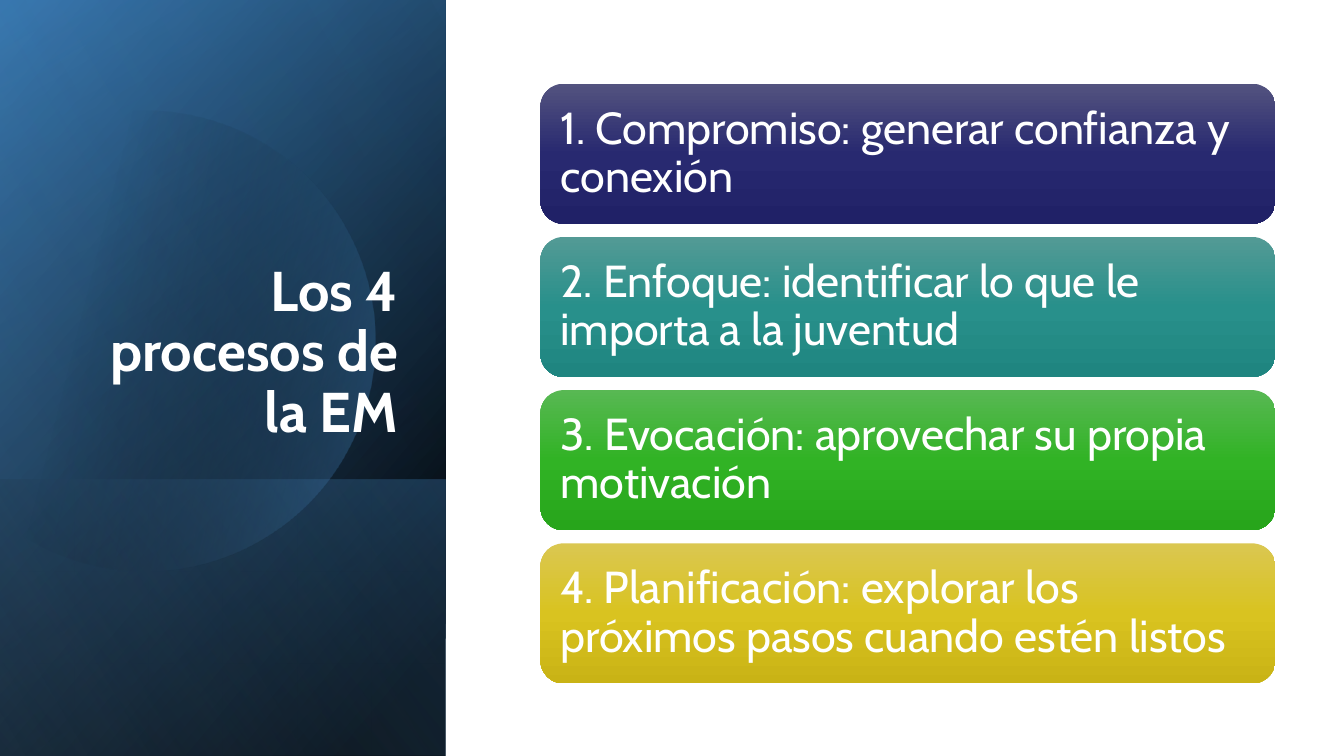
from dataclasses import dataclass
from math import acos, cos, sin

from lxml.etree import SubElement
from pptx import Presentation
from pptx.dml.color import RGBColor
from pptx.enum.shapes import MSO_SHAPE
from pptx.enum.text import MSO_ANCHOR, MSO_AUTO_SIZE, PP_ALIGN
from pptx.oxml.ns import qn
from pptx.shapes.autoshape import Shape
from pptx.slide import Slide
from pptx.text.text import TextFrame
from pptx.util import Inches, Pt

FONT = "Cabin"
WHITE = RGBColor(0xFF, 0xFF, 0xFF)
BLACK = RGBColor(0x00, 0x00, 0x00)
NAVY = RGBColor(0x2D, 0x6A, 0xA0)
BLUE = RGBColor(0x46, 0x8D, 0xCB)
SKY = RGBColor(0x90, 0xBB, 0xE0)


@dataclass
class Stop:
    place: int
    color: RGBColor
    alpha: int = 100


@dataclass
class Panel:
    top: float
    height: float
    angle: int
    stops: list[Stop]


@dataclass
class Card:
    text: str
    light: RGBColor
    middle: RGBColor
    dark: RGBColor


WIDE = 4.42
BACK = [
    Panel(0, 7.5, 50, [Stop(8, BLACK), Stop(100, NAVY)]),
    Panel(0, 7.5, 30, [Stop(0, BLACK, 0), Stop(99, BLUE, 46)]),
    Panel(4.76, 2.74, 130, [Stop(2, BLUE, 29), Stop(100, BLACK, 30)]),
]
GLOW = Panel(0, 7.5, 120, [Stop(0, BLACK, 0), Stop(99, SKY, 11)])
DISC = [Stop(29, BLACK, 0), Stop(100, BLUE, 43)]
CARDS = [
    Card("1. Compromiso: generar confianza y conexión",
         RGBColor(0x53, 0x53, 0x7F), RGBColor(0x28, 0x29, 0x70), RGBColor(0x20, 0x21, 0x67)),
    Card("2. Enfoque: identificar lo que le importa a la juventud",
         RGBColor(0x53, 0x9A, 0x95), RGBColor(0x28, 0x90, 0x8B), RGBColor(0x1F, 0x85, 0x80)),
    Card("3. Evocación: aprovechar su propia motivación",
         RGBColor(0x58, 0xB8, 0x53), RGBColor(0x31, 0xB3, 0x25), RGBColor(0x27, 0xA5, 0x1B)),
    Card("4. Planificación: explorar los próximos pasos cuando estén listos",
         RGBColor(0xDA, 0xC7, 0x51), RGBColor(0xD9, 0xC3, 0x20), RGBColor(0xC9, 0xB3, 0x15)),
]


def shade(shape: Shape, stops: list[Stop], angle: int) -> None:
    shape.shadow.inherit = False
    shape.line.fill.background()
    shape.fill.gradient()
    grad = shape.element.spPr.find(qn("a:gradFill"))
    grad.find(qn("a:lin")).set("ang", str(angle * 60000))
    items = grad.find(qn("a:gsLst"))
    for old in list(items):
        items.remove(old)
    for stop in stops:
        item = SubElement(items, qn("a:gs"), pos=str(stop.place * 1000))
        color = SubElement(item, qn("a:srgbClr"), val=str(stop.color))
        if stop.alpha < 100:
            SubElement(color, qn("a:alpha"), val=str(stop.alpha * 1000))


def draw_panel(slide: Slide, panel: Panel) -> None:
    left = (WIDE - panel.height) / 2
    top = panel.top + (panel.height - WIDE) / 2
    shape = slide.shapes.add_shape(
        MSO_SHAPE.RECTANGLE, Inches(left), Inches(top), Inches(panel.height), Inches(WIDE))
    shape.rotation = 90
    shape.element.spPr.find(qn("a:xfrm")).set("flipH", "1")
    shade(shape, panel.stops, panel.angle)


def draw_disc(slide: Slide) -> None:
    mid_x, mid_y, radius, edge = 1.44, 3.38, 2.28, -0.15
    sweep = acos((edge - mid_x) / radius)
    steps = 120
    turns = [sweep * (2 * i / steps - 1) for i in range(steps + 1)]
    points = [(Inches(mid_x + radius * cos(t)), Inches(mid_y + radius * sin(t))) for t in turns]
    pen = slide.shapes.build_freeform(*points[0])
    pen.add_line_segments(points[1:], close=True)
    shade(pen.convert_to_shape(), DISC, 14)


def write(frame: TextFrame, text: str, size: int, align: PP_ALIGN, bold: bool) -> None:
    frame.word_wrap = True
    frame.auto_size = MSO_AUTO_SIZE.NONE
    para = frame.paragraphs[0]
    para.alignment = align
    para.line_spacing = 0.9
    run = para.add_run()
    run.text = text
    run.font.name = FONT
    run.font.size = Pt(size)
    run.font.bold = bold
    run.font.color.rgb = WHITE


def draw_title(slide: Slide) -> None:
    title = slide.shapes.title
    title.left, title.top = Inches(0.64), Inches(1.84)
    title.width, title.height = Inches(3.41), Inches(2.62)
    title.text_frame.vertical_anchor = MSO_ANCHOR.BOTTOM
    write(title.text_frame, "Los 4 procesos de la EM", 40, PP_ALIGN.RIGHT, True)
    slide.shapes.element.append(title.element)


def draw_card(slide: Slide, card: Card, top: float) -> None:
    shape = slide.shapes.add_shape(
        MSO_SHAPE.ROUNDED_RECTANGLE, Inches(5.36), Inches(top), Inches(7.29), Inches(1.39))
    shade(shape, [Stop(0, card.light), Stop(50, card.middle), Stop(100, card.dark)], 90)
    frame = shape.text_frame
    frame.margin_left = frame.margin_right = Inches(0.13)
    frame.margin_top = frame.margin_bottom = Inches(0.13)
    frame.vertical_anchor = MSO_ANCHOR.MIDDLE
    write(frame, card.text, 32, PP_ALIGN.LEFT, False)


def main() -> None:
    deck = Presentation()
    deck.slide_width, deck.slide_height = Inches(13.33), Inches(7.5)
    slide = deck.slides.add_slide(deck.slide_layouts[5])
    for panel in BACK:
        draw_panel(slide, panel)
    draw_disc(slide)
    draw_panel(slide, GLOW)
    draw_title(slide)
    for row, card in enumerate(CARDS):
        draw_card(slide, card, 0.83 + row * 1.52)
    deck.save("out.pptx")


if __name__ == "__main__":
    main()
